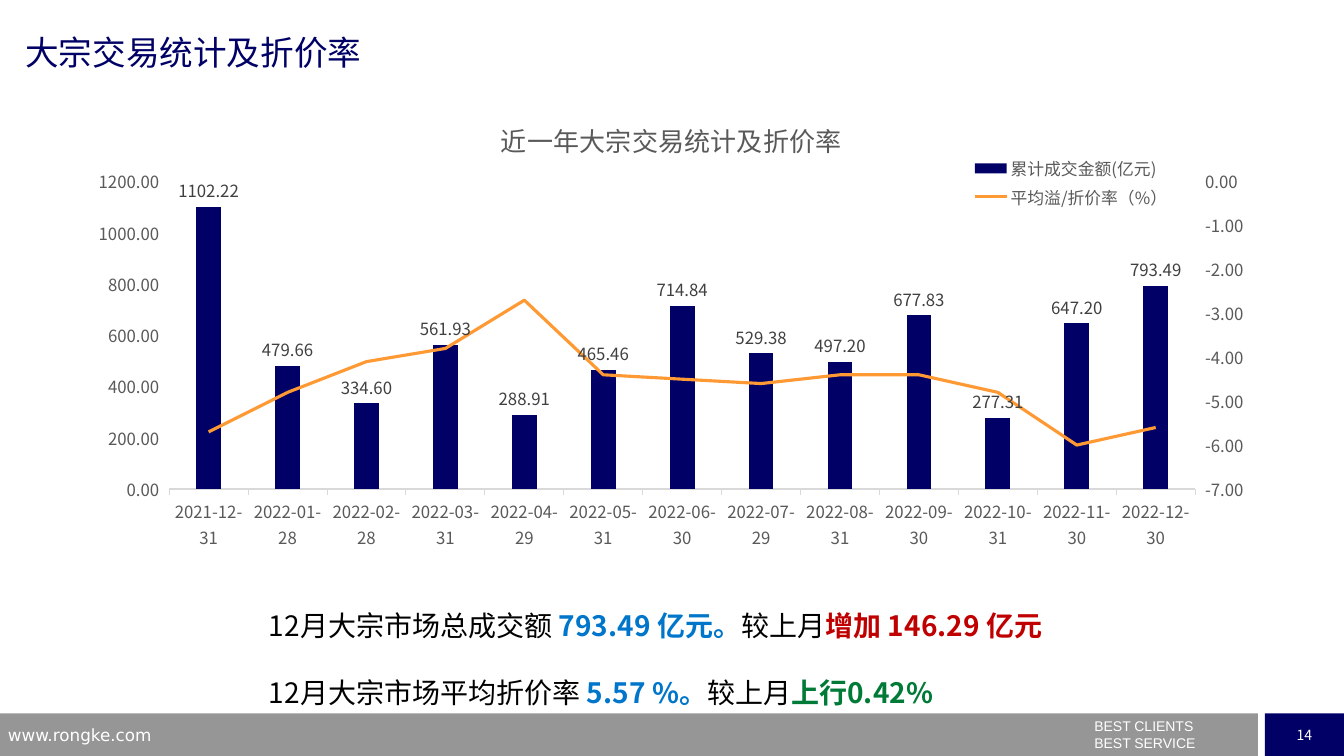
"""Build the slide on block trade turnover and discount rate."""
from copy import deepcopy
from dataclasses import dataclass

from pptx import Presentation
from pptx.chart.axis import ValueAxis
from pptx.chart.data import CategoryChartData
from pptx.dml.color import RGBColor
from pptx.enum.chart import XL_CHART_TYPE, XL_LABEL_POSITION, XL_LEGEND_POSITION, XL_MARKER_STYLE, XL_TICK_MARK
from pptx.enum.shapes import MSO_SHAPE
from pptx.enum.text import MSO_ANCHOR, PP_ALIGN
from pptx.oxml import parse_xml
from pptx.oxml.ns import nsdecls, qn
from pptx.util import Cm, Pt


@dataclass(frozen=True)
class Theme:
    navy: str = "000066"
    orange: str = "FF9933"
    gray: str = "969696"
    axis_line: str = "D9D9D9"
    muted: str = "595959"
    label: str = "404040"
    black: str = "000000"
    white: str = "FFFFFF"
    blue: str = "0076CB"
    red: str = "C00000"
    green: str = "007A37"
    body_font: str = "Noto Sans CJK SC"
    slogan_font: str = "Arial"
    site_font: str = "DejaVu Sans"
    heading: float = 24
    summary: float = 20
    chart_title: float = 18.6
    small: float = 12
    tiny: float = 10


THEME = Theme()
HEADING = "大宗交易统计及折价率"
CHART_TITLE = "近一年大宗交易统计及折价率"
TURNOVER_NAME, RATE_NAME = "累计成交金额(亿元)", "平均溢/折价率（%）"
MONTHS = [
    ("2021-12-31", 1102.22, -5.7),
    ("2022-01-28", 479.66, -4.8),
    ("2022-02-28", 334.60, -4.1),
    ("2022-03-31", 561.93, -3.8),
    ("2022-04-29", 288.91, -2.7),
    ("2022-05-31", 465.46, -4.4),
    ("2022-06-30", 714.84, -4.5),
    ("2022-07-29", 529.38, -4.6),
    ("2022-08-31", 497.20, -4.4),
    ("2022-09-30", 677.83, -4.4),
    ("2022-10-31", 277.31, -4.8),
    ("2022-11-30", 647.20, -6.0),
    ("2022-12-30", 793.49, -5.6),
]
SUMMARY = [
    [("12月大宗市场总成交额 ", THEME.black, False), ("793.49 亿元。", THEME.blue, True),
     ("较上月", THEME.black, False), ("增加 146.29 亿元", THEME.red, True)],
    [("12月大宗市场平均折价率 ", THEME.black, False), ("5.57 %。", THEME.blue, True),
     ("较上月", THEME.black, False), ("上行0.42%", THEME.green, True)],
]
SLOGAN = ["BEST CLIENTS", "BEST SERVICE"]
SITE = "www.rongke.com"
PAGE_NUMBER = "14"

SLIDE_WIDTH, SLIDE_HEIGHT = 33.87, 19.05
FOOTER_TOP, FOOTER_SPLIT, NUMBER_LEFT = 17.98, 31.7, 31.88
PLOT_LAYOUT = (0.075, 0.168, 0.868, 0.615)
LEGEND_LAYOUT = (0.748, 0.11, 0.18, 0.12)


def style(font, size, color, name=THEME.body_font, bold=False):
    font.size, font.name, font.bold = Pt(size), name, bold
    font.color.rgb = RGBColor.from_string(color)


def add_span(para, text, size, color, name=THEME.body_font, bold=False):
    span = para.add_run()
    span.text = text
    style(span.font, size, color, name, bold)


def add_box(page, left, top, width, height):
    box = page.shapes.add_textbox(Cm(left), Cm(top), Cm(width), Cm(height))
    box.text_frame.word_wrap = True
    return box.text_frame


def add_paragraphs(frame, count):
    return [frame.paragraphs[0]] + [frame.add_paragraph() for _ in range(count - 1)]


def add_bar(page, left, width, color):
    bar = page.shapes.add_shape(MSO_SHAPE.RECTANGLE, Cm(left), Cm(FOOTER_TOP),
                                Cm(width), Cm(SLIDE_HEIGHT - FOOTER_TOP))
    bar.shadow.inherit = False
    bar.fill.solid()
    bar.fill.fore_color.rgb = RGBColor.from_string(color)
    bar.line.fill.background()
    return bar.text_frame


def use_east_asian_font(root):
    for latin in list(root.iter(qn("a:latin"))):
        latin.addnext(parse_xml(f'<a:ea {nsdecls("a")} typeface="{THEME.body_font}"/>'))


def make_layout(values, inner=False):
    target = '<c:layoutTarget val="inner"/>' if inner else ""
    modes = '<c:xMode val="edge"/><c:yMode val="edge"/>'
    sizes = "".join(f'<c:{key} val="{value}"/>' for key, value in zip("xywh", values))
    return parse_xml(f'<c:layout {nsdecls("c")}><c:manualLayout>{target}{modes}{sizes}'
                     '</c:manualLayout></c:layout>')


def replace_layout(parent, layout, position):
    for old in parent.findall(qn("c:layout")):
        parent.remove(old)
    parent.insert(position, layout)


def move_rate_to_line(chart):
    plot_area = chart.element.find(".//" + qn("c:plotArea"))
    bar_chart = plot_area.find(qn("c:barChart"))
    rate = bar_chart.findall(qn("c:ser"))[1]
    for flag in rate.findall(qn("c:invertIfNegative")):
        rate.remove(flag)
    line_chart = parse_xml(
        f'<c:lineChart {nsdecls("c")}><c:grouping val="standard"/><c:varyColors val="0"/>'
        '<c:marker val="1"/><c:axId val="50010"/><c:axId val="50020"/></c:lineChart>')
    line_chart.insert(2, rate)
    bar_chart.addnext(line_chart)

    category = deepcopy(plot_area.find(qn("c:catAx")))
    value = deepcopy(plot_area.find(qn("c:valAx")))
    for axis, own, other in ((category, "50010", "50020"), (value, "50020", "50010")):
        axis.find(qn("c:axId")).set("val", own)
        axis.find(qn("c:crossAx")).set("val", other)
    ValueAxis(category).visible = False
    value.find(qn("c:axPos")).set("val", "r")
    value.find(qn("c:crosses")).set("val", "max")
    plot_area.findall(qn("c:valAx"))[-1].addnext(value)
    value.addnext(category)
    right = ValueAxis(value)
    right.minimum_scale, right.maximum_scale, right.major_unit = -7, 0, 1
    replace_layout(plot_area, make_layout(PLOT_LAYOUT, True), 0)


def add_trade_chart(page):
    dates, turnover, rates = zip(*MONTHS)
    data = CategoryChartData(number_format="0.00")
    data.categories = dates
    data.add_series(TURNOVER_NAME, turnover)
    data.add_series(RATE_NAME, rates)
    chart = page.shapes.add_chart(XL_CHART_TYPE.COLUMN_CLUSTERED, Cm(2.03), Cm(2.46),
                                  Cm(29.79), Cm(12.6), data).chart
    style(chart.font, THEME.tiny, THEME.black)
    add_span(chart.chart_title.text_frame.paragraphs[0], CHART_TITLE, THEME.chart_title, THEME.muted)

    for axis in (chart.category_axis, chart.value_axis):
        style(axis.tick_labels.font, THEME.small, THEME.muted)
        axis.major_tick_mark, axis.has_major_gridlines = XL_TICK_MARK.OUTSIDE, False
    chart.category_axis.format.line.color.rgb = RGBColor.from_string(THEME.axis_line)
    chart.category_axis.format.line.width = Pt(0.75)
    left = chart.value_axis
    left.format.line.fill.background()
    left.minimum_scale, left.maximum_scale, left.major_unit = 0, 1200, 200
    left.tick_labels.number_format, left.tick_labels.number_format_is_linked = "0.00", False
    move_rate_to_line(chart)

    columns, lines = chart.plots
    columns.gap_width, columns.vary_by_categories = 219, False
    bars, rate = columns.series[0], lines.series[0]
    bars.format.fill.solid()
    bars.format.fill.fore_color.rgb = RGBColor.from_string(THEME.navy)
    labels = bars.data_labels
    labels.show_value, labels.position = True, XL_LABEL_POSITION.OUTSIDE_END
    labels.number_format, labels.number_format_is_linked = "0.00", False
    style(labels.font, THEME.small, THEME.label)
    rate.smooth, rate.marker.style = False, XL_MARKER_STYLE.NONE
    rate.format.line.color.rgb = RGBColor.from_string(THEME.orange)
    rate.format.line.width = Pt(2.25)

    chart.has_legend = True
    chart.legend.position, chart.legend.include_in_layout = XL_LEGEND_POSITION.BOTTOM, False
    style(chart.legend.font, THEME.small, THEME.muted)
    replace_layout(chart.element.find(".//" + qn("c:legend")), make_layout(LEGEND_LAYOUT), 1)
    use_east_asian_font(chart.element)


def add_footer(page):
    add_bar(page, 0, FOOTER_SPLIT, THEME.gray)
    number = add_bar(page, NUMBER_LEFT, SLIDE_WIDTH - NUMBER_LEFT, THEME.navy)
    number.word_wrap, number.vertical_anchor = False, MSO_ANCHOR.MIDDLE
    number.paragraphs[0].alignment = PP_ALIGN.CENTER
    add_span(number.paragraphs[0], PAGE_NUMBER, THEME.tiny, THEME.white)
    slogan = add_box(page, 27.33, 18.14, 6.5, 0.91)
    for index, (para, text) in enumerate(zip(add_paragraphs(slogan, len(SLOGAN)), SLOGAN)):
        para.line_spacing, para.space_before = 0.5, Pt(5.75 if index else 0)
        add_span(para, text, THEME.tiny, THEME.white, THEME.slogan_font)
    site = add_box(page, -0.05, 18.14, 8.18, 0.66)
    add_span(site.paragraphs[0], SITE, THEME.small, THEME.white, THEME.site_font)


def main():
    deck = Presentation()
    deck.slide_width, deck.slide_height = Cm(SLIDE_WIDTH), Cm(SLIDE_HEIGHT)
    page = deck.slides.add_slide(deck.slide_layouts[6])
    add_footer(page)
    heading = add_box(page, 0.64, 0.81, 9, 1.3)
    heading.margin_left = heading.margin_right = heading.margin_top = heading.margin_bottom = 0
    add_span(heading.paragraphs[0], HEADING, THEME.heading, THEME.navy)
    summary = add_box(page, 6.53, 14.35, 21.21, 3.43)
    for para, spans in zip(add_paragraphs(summary, len(SUMMARY)), SUMMARY):
        para.alignment, para.line_spacing = PP_ALIGN.JUSTIFY, 2.0
        for text, color, bold in spans:
            add_span(para, text, THEME.summary, color, bold=bold)
    add_trade_chart(page)
    use_east_asian_font(page.element)
    deck.save("out.pptx")


if __name__ == "__main__":
    main()
